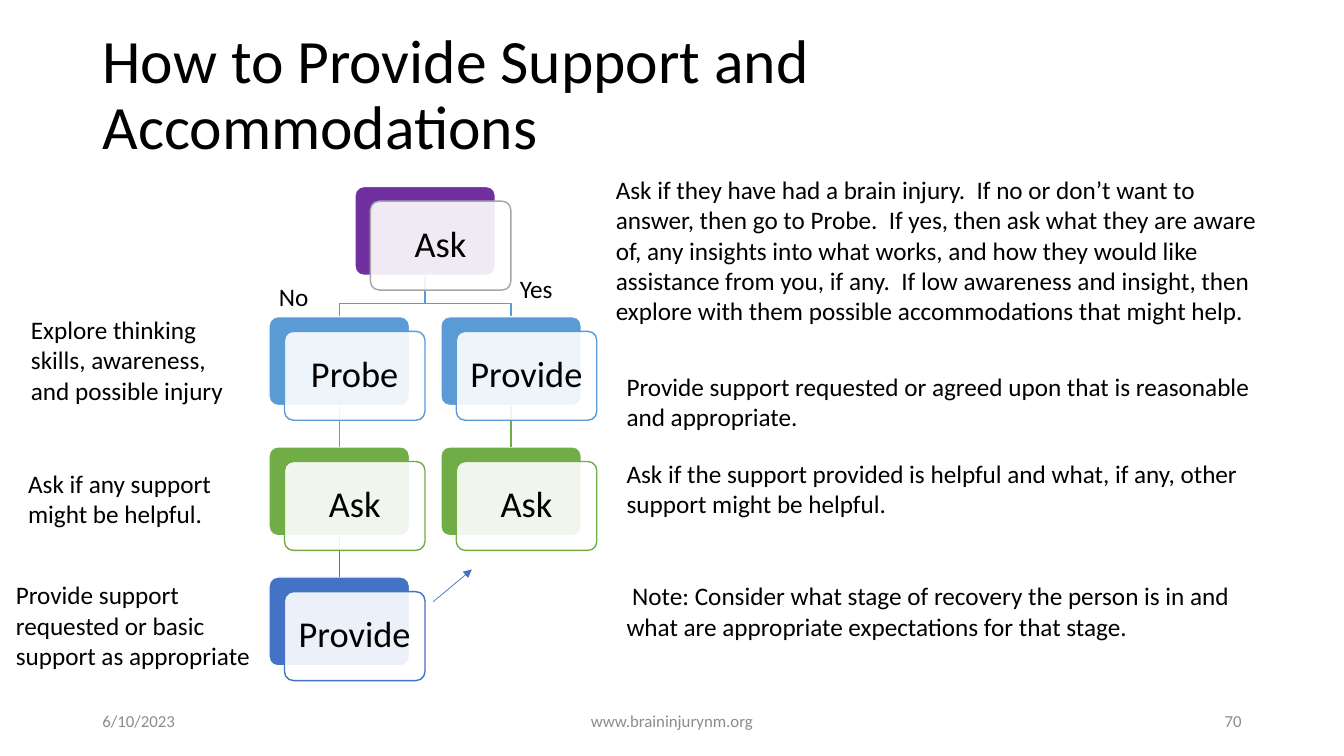
from lxml.etree import SubElement
from pptx import Presentation
from pptx.dml.color import RGBColor
from pptx.enum.shapes import MSO_CONNECTOR, MSO_SHAPE
from pptx.enum.text import MSO_ANCHOR, PP_ALIGN
from pptx.oxml.ns import qn
from pptx.util import Cm, Pt

TITLE = "How to Provide Support and Accommodations"
BLACK, WHITE, GRAY = "000000", "FFFFFF", "8C8C8C"
PURPLE, SILVER, BLUE, GREEN, INDIGO = "7030A0", "A5A5A5", "5B9BD5", "70AD47", "4472C4"

STEPS = {
    "ask": ("Ask", 0.5, 0, PURPLE, SILVER),
    "probe": ("Probe", 0, 1, BLUE, BLUE),
    "ask left": ("Ask", 0, 2, GREEN, GREEN),
    "provide left": ("Provide", 0, 3, INDIGO, INDIGO),
    "provide right": ("Provide", 1, 1, BLUE, BLUE),
    "ask right": ("Ask", 1, 2, GREEN, GREEN),
}
BRANCHES = [("ask", "provide right"), ("ask", "probe")]
LINKS = [("provide right", "ask right"), ("ask left", "provide left"), ("probe", "ask left")]

NOTES = [
    (15.27, 4.27, 16.76, 4.11, [
        "Ask if they have had a brain injury.  If no or don’t want to answer, then go to Probe.  "
        "If yes, then ask what they are aware of, any insights into what works, and how they would "
        "like assistance from you, if any.  If low awareness and insight, then explore with them "
        "possible accommodations that might help."]),
    (6.78, 6.96, 1.27, 1.02, ["No"]),
    (12.85, 6.76, 1.52, 1.02, ["Yes"]),
    (15.54, 9.22, 16.76, 1.8, [
        "Provide support requested or agreed upon that is reasonable and appropriate."]),
    (15.54, 11.43, 16.2, 4.88, [
        "Ask if the support provided is helpful and what, if any, other support might be helpful.",
        " Note: Consider what stage of recovery the person is in and what are appropriate "
        "expectations for that stage."]),
    (0.53, 7.8, 5.74, 2.57, ["Explore thinking skills, awareness, and possible injury"]),
    (0.46, 11.68, 5.74, 1.8, ["Ask if any support might be helpful."]),
    (0.15, 14.48, 6.65, 2.57, ["Provide support requested or basic support as appropriate"]),
]
FOOTERS = [
    (2.33, 7.62, PP_ALIGN.LEFT, "6/10/2023"),
    (11.22, 11.43, PP_ALIGN.CENTER, "www.braininjurynm.org"),
    (23.92, 7.62, PP_ALIGN.RIGHT, "70"),
]

CHART_LEFT, CHART_TOP = 6.78, 4.7
COLUMN_STEP, ROW_STEP = 4.33, 3.28
BOX_WIDTH, BOX_HEIGHT = 3.54, 2.24
SHIFT_X, SHIFT_Y = 0.39, 0.37
BRANCH_Y = 7.65


def color(value):
    return RGBColor.from_string(value)


def write(para, text, size, ink=BLACK, align=PP_ALIGN.LEFT):
    para.alignment = align
    span = para.add_run()
    span.text = text
    span.font.name = "Calibri"
    span.font.size = Pt(size)
    span.font.color.rgb = color(ink)


def add_text(left, top, width, height, texts, size, ink=BLACK, align=PP_ALIGN.LEFT,
             anchor=MSO_ANCHOR.TOP):
    frame = page.shapes.add_textbox(Cm(left), Cm(top), Cm(width), Cm(height)).text_frame
    frame.word_wrap = True
    frame.vertical_anchor = anchor
    for index, text in enumerate(texts):
        para = frame.add_paragraph() if index else frame.paragraphs[0]
        if index:
            para.space_before = Pt(44)
        write(para, text, size, ink, align)


def corner(column, row):
    return CHART_LEFT + column * COLUMN_STEP, CHART_TOP + row * ROW_STEP


def add_box(left, top, fill, line):
    box = page.shapes.add_shape(MSO_SHAPE.ROUNDED_RECTANGLE, Cm(left), Cm(top),
                                Cm(BOX_WIDTH), Cm(BOX_HEIGHT))
    box.adjustments[0] = 0.1
    box.shadow.inherit = False
    box.fill.solid()
    box.fill.fore_color.rgb = color(fill)
    box.line.color.rgb = color(line)
    box.line.width = Pt(1)
    return box


def add_line(x1, y1, x2, y2, ink, width):
    line = page.shapes.add_connector(MSO_CONNECTOR.STRAIGHT, Cm(x1), Cm(y1), Cm(x2), Cm(y2))
    line.line.color.rgb = color(ink)
    line.line.width = Pt(width)
    SubElement(line._element.spPr, qn("a:effectLst"))
    return line


def add_branch(parent, child):
    x1, y1 = corner(*STEPS[parent][1:3])
    x2, y2 = corner(*STEPS[child][1:3])
    x1, x2, y1 = x1 + BOX_WIDTH / 2, x2 + BOX_WIDTH / 2, y1 + BOX_HEIGHT
    builder = page.shapes.build_freeform(Cm(x1), Cm(y1))
    bends = [(x1, BRANCH_Y), (x2, BRANCH_Y), (x2, y2)]
    builder.add_line_segments([(Cm(x), Cm(y)) for x, y in bends], close=False)
    branch = builder.convert_to_shape()
    branch.shadow.inherit = False
    branch.fill.background()
    branch.line.color.rgb = color(BLUE)
    branch.line.width = Pt(1)


deck = Presentation()
deck.slide_width, deck.slide_height = Cm(33.87), Cm(19.05)
page = deck.slides.add_slide(deck.slide_layouts[5])

title = page.shapes.title
title.left, title.top, title.width, title.height = Cm(2.33), Cm(1.01), Cm(29.4), Cm(2.85)
title.text_frame.word_wrap = True
title.text_frame.vertical_anchor = MSO_ANCHOR.MIDDLE
title.text_frame.paragraphs[0].line_spacing = 0.9
write(title.text_frame.paragraphs[0], TITLE, 44)

for parent, child in BRANCHES:
    add_branch(parent, child)

backs = {}
for name, (label, column, row, fill, outline) in STEPS.items():
    backs[name] = add_box(*corner(column, row), fill, WHITE)

for parent, child in LINKS:
    link = add_line(0, 0, 1, 1, STEPS[child][3], 1)
    link.begin_connect(backs[parent], 2)
    link.end_connect(backs[child], 0)

for label, column, row, fill, outline in STEPS.values():
    left, top = corner(column, row)
    front = add_box(left + SHIFT_X, top + SHIFT_Y, WHITE, outline)
    tint = front._element.spPr.find(qn("a:solidFill")).find(qn("a:srgbClr"))
    SubElement(tint, qn("a:alpha"), val="90000")
    frame = front.text_frame
    frame.word_wrap = True
    frame.vertical_anchor = MSO_ANCHOR.MIDDLE
    frame.margin_left = frame.margin_right = Cm(0.1)
    frame.margin_top = frame.margin_bottom = Cm(0.3)
    frame.paragraphs[0].line_spacing = 0.9
    write(frame.paragraphs[0], label, 26, align=PP_ALIGN.CENTER)

for left, top, width, height, texts in NOTES:
    add_text(left, top, width, height, texts, 18)

for left, width, align, text in FOOTERS:
    add_text(left, 17.66, width, 1.01, [text], 12, GRAY, align, MSO_ANCHOR.MIDDLE)

arrow = add_line(10.92, 15.16, 11.89, 14.35, INDIGO, 0.5)
SubElement(arrow.line._get_or_add_ln(), qn("a:tailEnd"), type="triangle")

deck.save("out.pptx")
